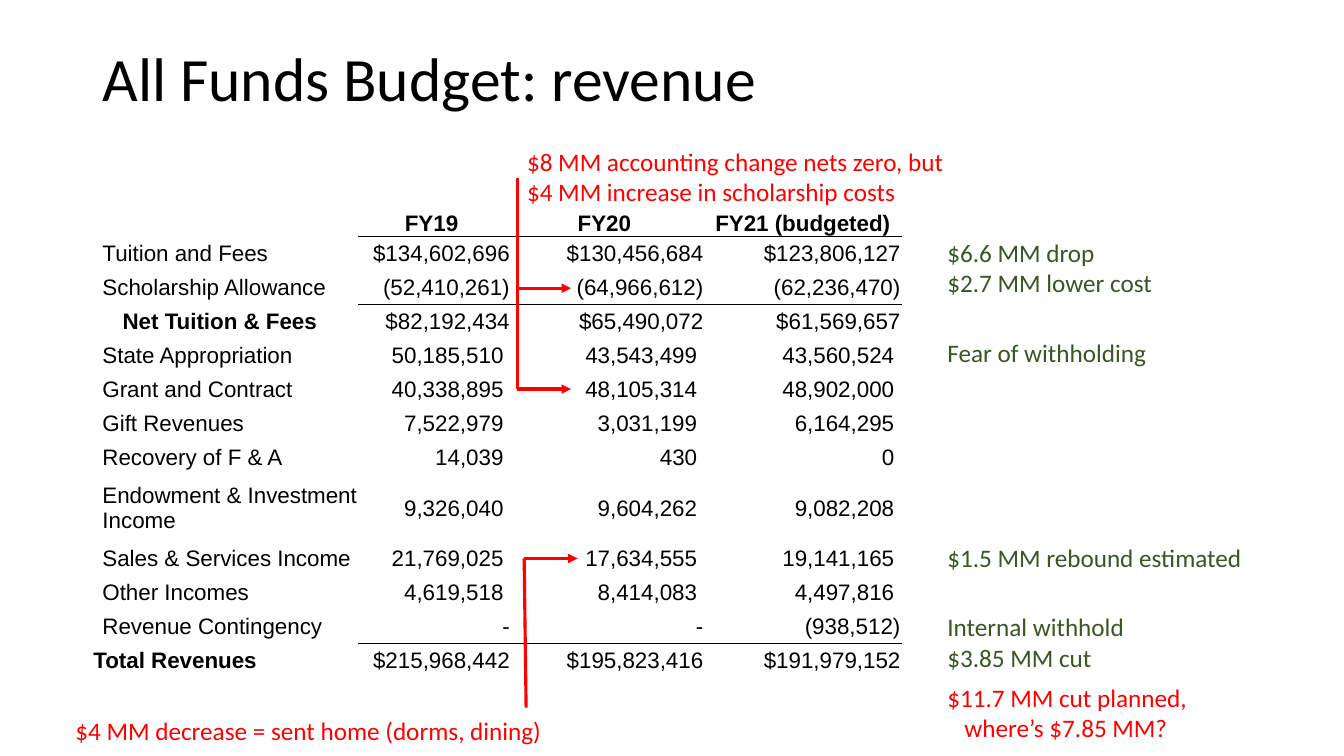
"""Build the revenue slide of the All Funds Budget."""
import pptx
import pptx.dml.color
import pptx.enum.shapes
import pptx.enum.text
import pptx.oxml
import pptx.oxml.ns
import pptx.util

Pt = pptx.util.Pt
ALIGN = pptx.enum.text.PP_ALIGN
ANCHOR = pptx.enum.text.MSO_ANCHOR
FIT = pptx.enum.text.MSO_AUTO_SIZE
BLACK, WHITE, RED, GREEN = "000000", "FFFFFF", "FF0000", "385723"

HEADINGS = ["", "FY19", "FY20", "FY21 (budgeted)"]
REVENUES = [
    ["Tuition and Fees", "$134,602,696", "$130,456,684", "$123,806,127"],
    ["Scholarship Allowance", "(52,410,261)", "(64,966,612)", "(62,236,470)"],
    ["Net Tuition & Fees", "$82,192,434", "$65,490,072", "$61,569,657"],
    ["State Appropriation", "50,185,510", "43,543,499", "43,560,524"],
    ["Grant and Contract", "40,338,895", "48,105,314", "48,902,000"],
    ["Gift Revenues", "7,522,979", "3,031,199", "6,164,295"],
    ["Recovery of F & A", "14,039", "430", "0"],
    ["Endowment & Investment Income", "9,326,040", "9,604,262", "9,082,208"],
    ["Sales & Services Income", "21,769,025", "17,634,555", "19,141,165"],
    ["Other Incomes", "4,619,518", "8,414,083", "4,497,816"],
    ["Revenue Contingency", "-", "-", "(938,512)"],
    ["Total Revenues", "$215,968,442", "$195,823,416", "$191,979,152"],
]
LABEL_INDENTS = {"Net Tuition & Fees": 21.6, "Total Revenues": 0.7}
COLUMN_WIDTHS = [190.2, 108.6, 138.3, 140.8]
HEADING_HEIGHT, ROW_HEIGHT, TALL_HEIGHT = 41.5, 24.3, 47.8
TALL_ROW = 8
RULED_ROWS = (0, 2, 11)

NOTES = [
    (369.4, 100.8, 316, 51, RED,
     ["$8 MM accounting change nets zero, but", "$4 MM increase in scholarship costs"], 0),
    (669.6, 165.6, 162, 51, GREEN, ["$6.6 MM drop", "$2.7 MM lower cost"], 0),
    (669.6, 237.6, 158.4, 29, GREEN, ["Fear of withholding"], 0),
    (669.6, 383.8, 227.5, 29, GREEN, ["$1.5 MM rebound estimated"], 0),
    (46.8, 507.6, 351.4, 29, RED, ["$4 MM decrease = sent home (dorms, dining)"], 0),
    (669.6, 433.4, 141.8, 51, GREEN, ["Internal withhold", "$3.85 MM cut"], 0),
    (669.6, 483.8, 192.2, 51, RED, ["$11.7 MM cut planned,", "where’s $7.85 MM?"], 12.2),
]
BRACKETS = [
    (369.4, 127.4, 369.4, 277.9, False),
    (369.4, 205.9, 407.9, 205.9, True),
    (369.4, 277.9, 407.9, 277.9, True),
    (374.4, 398.9, 412.6, 398.9, True),
    (374.4, 398.9, 375.8, 505.4, False),
]


def rgb(hex_color):
    """Turn a hex string into a colour."""
    return pptx.dml.color.RGBColor.from_string(hex_color)


def write(paragraph, text, font="Calibri", size=18, color=BLACK, bold=False, align=ALIGN.LEFT):
    """Add formatted text to a paragraph."""
    paragraph.alignment = align
    run = paragraph.add_run()
    run.text = text
    run.font.name = font
    run.font.size = Pt(size)
    run.font.bold = bold
    run.font.color.rgb = rgb(color)


def add_title(slide, text):
    """Place and fill the title."""
    title = slide.shapes.title
    title.left, title.top, title.width, title.height = Pt(66), Pt(5.8), Pt(828), Pt(104.4)
    title.text_frame.auto_size = FIT.NONE
    title.text_frame.vertical_anchor = ANCHOR.MIDDLE
    paragraph = title.text_frame.paragraphs[0]
    paragraph.line_spacing = 0.9
    write(paragraph, text, size=44)


def add_note(slide, left, top, width, height, color, lines, last_indent):
    """Add a coloured remark, its last line indented if asked."""
    note = slide.shapes.add_textbox(Pt(left), Pt(top), Pt(width), Pt(height))
    frame = note.text_frame
    frame.word_wrap = False
    frame.auto_size = FIT.SHAPE_TO_FIT_TEXT
    for index, line in enumerate(lines):
        paragraph = frame.add_paragraph() if index else frame.paragraphs[0]
        write(paragraph, line, color=color)
    if last_indent:
        paragraph_format = frame.paragraphs[-1]._p.get_or_add_pPr()
        paragraph_format.set("marL", str(Pt(last_indent)))
        paragraph_format.set("indent", "0")


def add_bracket(slide, x1, y1, x2, y2, arrow):
    """Add one red line, with an arrowhead at its end if asked."""
    bracket = slide.shapes.add_connector(
        pptx.enum.shapes.MSO_CONNECTOR.STRAIGHT, Pt(x1), Pt(y1), Pt(x2), Pt(y2))
    bracket.line.color.rgb = rgb(RED)
    bracket.line.width = Pt(2.25)
    if arrow:
        head = pptx.oxml.parse_xml(
            f'<a:tailEnd {pptx.oxml.ns.nsdecls("a")} type="triangle"/>')
        bracket.line._get_or_add_ln().append(head)
    bracket._element.spPr.append(
        pptx.oxml.parse_xml(f'<a:effectLst {pptx.oxml.ns.nsdecls("a")}/>'))


def add_rule(cell, side):
    """Draw a black border on one side of a cell."""
    border = pptx.oxml.parse_xml(
        f'<a:{side} {pptx.oxml.ns.nsdecls("a")} w="{Pt(1)}">'
        f'<a:solidFill><a:srgbClr val="{BLACK}"/></a:solidFill></a:{side}>')
    cell._tc.get_or_add_tcPr().insert(0, border)


def fill_cell(cell, text, row, column):
    """Fill and format one table cell according to its row and column."""
    heading, label = row == 0, column == 0
    cell.fill.solid()
    cell.fill.fore_color.rgb = rgb(WHITE)
    cell.margin_left = cell.margin_right = cell.margin_top = Pt(0.7)
    cell.margin_bottom = Pt(0)
    cell.vertical_anchor = ANCHOR.BOTTOM if heading else ANCHOR.MIDDLE
    if label:
        cell.margin_left = Pt(LABEL_INDENTS.get(text, 7.2))
        align = ALIGN.LEFT
    else:
        align = ALIGN.CENTER if heading else ALIGN.RIGHT
        if text[-1].isdigit() and not text.startswith("$"):
            cell.margin_right = Pt(5.15)
        if row in RULED_ROWS:
            add_rule(cell, "lnB")
        if row - 1 in RULED_ROWS:
            add_rule(cell, "lnT")
    if text:
        write(cell.text_frame.paragraphs[0], text, font="Arial", size=16,
              bold=heading or text in LABEL_INDENTS, align=align)


def add_revenue_table(slide):
    """Add the table of revenues by fiscal year."""
    rows = [HEADINGS, *REVENUES]
    heights = [ROW_HEIGHT] * len(rows)
    heights[0], heights[TALL_ROW] = HEADING_HEIGHT, TALL_HEIGHT
    table = slide.shapes.add_table(
        len(rows), len(HEADINGS), Pt(66), Pt(127.4),
        Pt(sum(COLUMN_WIDTHS)), Pt(sum(heights))).table
    table.first_row = table.horz_banding = False
    for column, width in enumerate(COLUMN_WIDTHS):
        table.columns[column].width = Pt(width)
    for row, (height, texts) in enumerate(zip(heights, rows)):
        table.rows[row].height = Pt(height)
        for column, text in enumerate(texts):
            fill_cell(table.cell(row, column), text, row, column)


def main():
    """Build and save the slide."""
    presentation = pptx.Presentation()
    presentation.slide_width, presentation.slide_height = Pt(960), Pt(540)
    slide = presentation.slides.add_slide(presentation.slide_layouts[5])
    add_title(slide, "All Funds Budget: revenue")
    add_revenue_table(slide)
    for note in NOTES:
        add_note(slide, *note)
    for bracket in BRACKETS:
        add_bracket(slide, *bracket)
    presentation.save("out.pptx")


if __name__ == "__main__":
    main()
